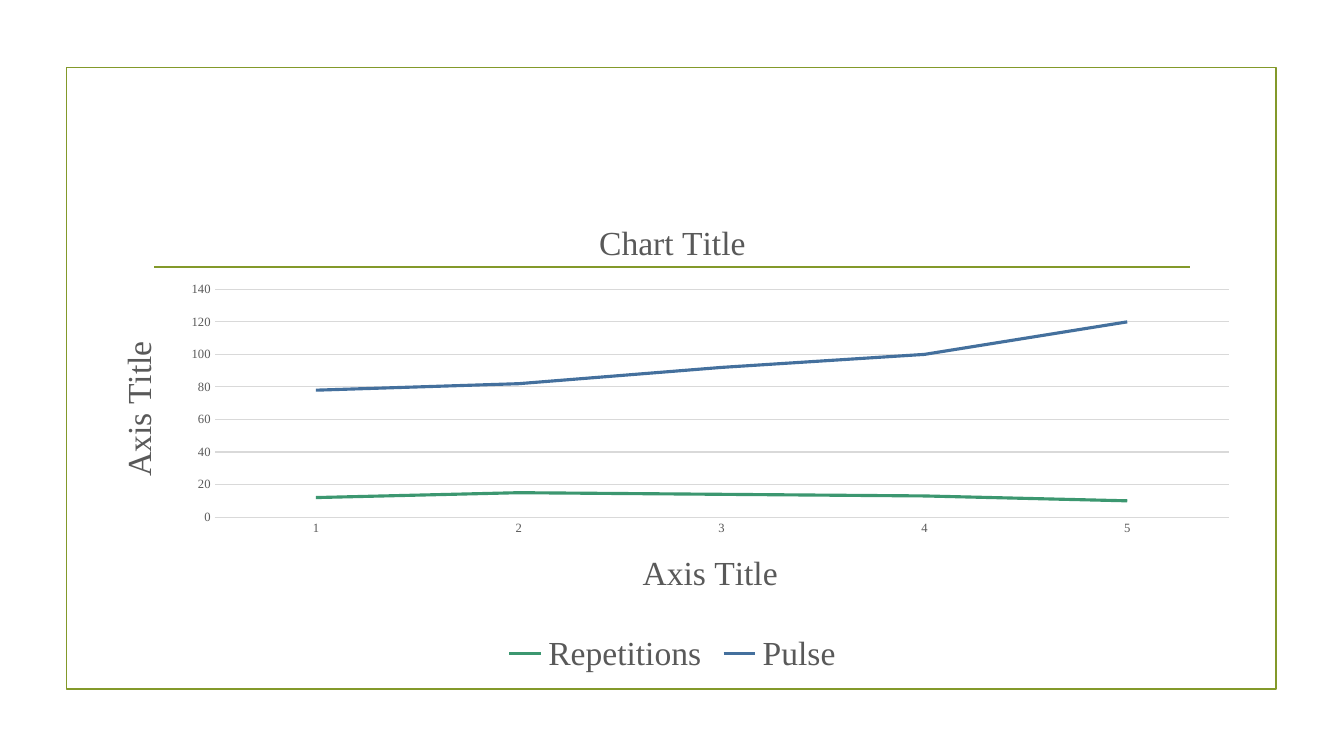
from pptx import Presentation
from pptx.chart.data import CategoryChartData
from pptx.dml.color import RGBColor
from pptx.enum.chart import XL_CHART_TYPE, XL_LEGEND_POSITION, XL_MARKER_STYLE, XL_TICK_MARK
from pptx.enum.shapes import MSO_CONNECTOR, MSO_SHAPE
from pptx.oxml import parse_xml
from pptx.oxml.ns import nsdecls, qn
from pptx.util import Cm, Pt
from lxml.etree import SubElement

OLIVE = RGBColor(0x83, 0x99, 0x2A)
GRAY = RGBColor(0x59, 0x59, 0x59)
GRID = RGBColor(0xD9, 0xD9, 0xD9)
GREEN = RGBColor(0x3C, 0x97, 0x70)
BLUE = RGBColor(0x44, 0x70, 0x9D)
FONT = "Times New Roman"


def style_font(font, size):
    font.name = FONT
    font.size = Pt(size)
    font.bold = False
    font.color.rgb = GRAY


def add_title(title, text):
    """Write a chart or axis title as one styled run."""
    span = title.text_frame.paragraphs[0].add_run()
    span.text = text
    style_font(span.font, 24)


deck = Presentation()
deck.slide_width, deck.slide_height = Cm(33.87), Cm(19.05)
page = deck.slides.add_slide(deck.slide_layouts[6])

# Frame and rule
frame = page.shapes.add_shape(MSO_SHAPE.RECTANGLE, Cm(1.68), Cm(1.7), Cm(30.48), Cm(15.67))
frame.shadow.inherit = False
frame.fill.background()
rule = page.shapes.add_connector(MSO_CONNECTOR.STRAIGHT, Cm(3.89), Cm(6.73), Cm(30), Cm(6.73))
SubElement(rule.element.spPr, qn("a:effectLst"))
for outline in (frame.line, rule.line):
    outline.color.rgb = OLIVE
    outline.width = Pt(1.25)

# Line chart
data = CategoryChartData()
data.categories = ["1", "2", "3", "4", "5"]
data.add_series("Repetitions", [12, 15, 14, 13, 10])
data.add_series("Pulse", [78, 82, 92, 100, 120])
chart = page.shapes.add_chart(
    XL_CHART_TYPE.LINE, Cm(2.34), Cm(5.03), Cm(29.21), Cm(12.09), data).chart
style_font(chart.font, 10)
add_title(chart.chart_title, "Chart Title")
chart.chart_title.include_in_layout = False

chart.has_legend = True
chart.legend.position = XL_LEGEND_POSITION.BOTTOM
chart.legend.include_in_layout = False
style_font(chart.legend.font, 24)

plot = chart.plots[0]
plot.vary_by_categories = False
for series, color in zip(plot.series, (GREEN, BLUE)):
    series.smooth = False
    series.marker.style = XL_MARKER_STYLE.NONE
    series.format.line.color.rgb = color
    series.format.line.width = Pt(2.25)

# Axes
for axis in (chart.category_axis, chart.value_axis):
    add_title(axis.axis_title, "Axis Title")
    style_font(axis.tick_labels.font, 9)
    axis.major_tick_mark = XL_TICK_MARK.NONE
    axis.minor_tick_mark = XL_TICK_MARK.NONE
chart.value_axis.axis_title.element.xpath(".//a:bodyPr")[0].set("rot", "-5400000")
chart.value_axis.minimum_scale = 0
chart.value_axis.maximum_scale = 140
chart.value_axis.major_unit = 20
chart.value_axis.has_major_gridlines = True
chart.value_axis.format.line.fill.background()
for line in (chart.category_axis.format.line, chart.value_axis.major_gridlines.format.line):
    line.color.rgb = GRID
    line.width = Pt(0.75)

# Plot area inside the chart, as fractions of its size
plot_area = chart.element.xpath(".//c:plotArea")[0]
for layout in plot_area.findall(qn("c:layout")):
    plot_area.remove(layout)
plot_area.insert(0, parse_xml(
    f'<c:layout {nsdecls("c")}><c:manualLayout><c:layoutTarget val="inner"/>'
    '<c:xMode val="edge"/><c:yMode val="edge"/><c:x val="0.105"/><c:y val="0.187"/>'
    '<c:w val="0.875"/><c:h val="0.475"/></c:manualLayout></c:layout>'))

deck.save("out.pptx")
